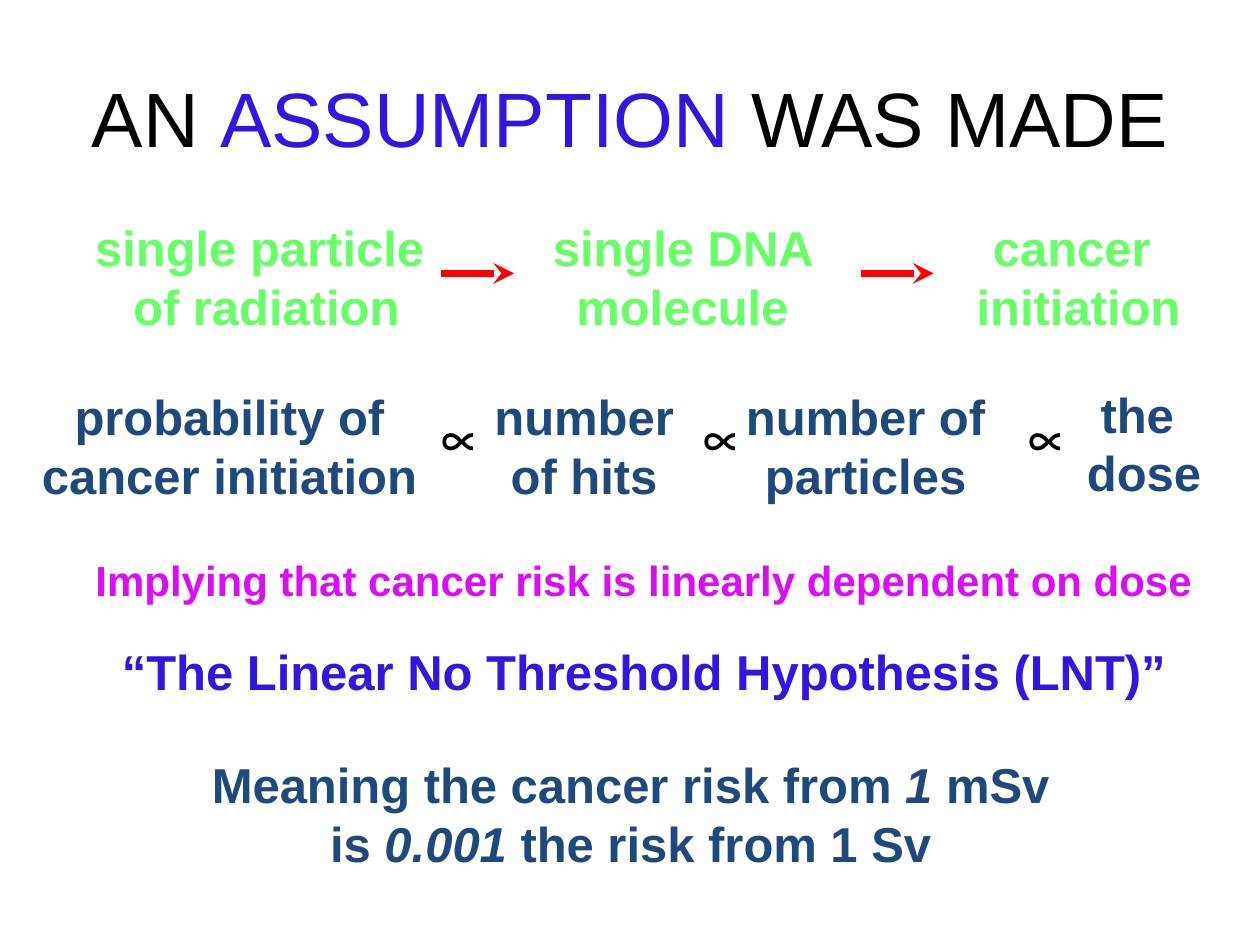
from lxml import etree
from pptx import Presentation
from pptx import util as u
from pptx.dml.color import RGBColor
from pptx.enum import shapes, text
from pptx.oxml.ns import qn

COLOURS = {
    "black": "000000", "blue": "3215E1", "green": "66FF66",
    "navy": "1F497D", "magenta": "DB0DF4", "red": "FF0000",
}


def colour(name):
    return RGBColor.from_string(COLOURS[name])


def add_span(para, words, tint, **formats):
    span = para.add_run()
    span.text = words
    span.font.color.rgb = colour(tint)
    for key, value in {"name": "Arial", **formats}.items():
        setattr(span.font, key, value)


def add_text(page, box, lines, tint, size=28, wrap=False):
    """Add centred bold lines; each line is a list of (words, formats) spans."""
    frame = page.shapes.add_textbox(*map(u.Inches, box)).text_frame
    frame.word_wrap = wrap
    frame.auto_size = text.MSO_AUTO_SIZE.SHAPE_TO_FIT_TEXT
    for index, spans in enumerate(lines):
        para = frame.paragraphs[0] if index == 0 else frame.add_paragraph()
        para.alignment = text.PP_ALIGN.CENTER
        for words, formats in spans:
            add_span(para, words, tint, **{"size": u.Pt(size), "bold": True, **formats})
    return frame


def plain(*lines):
    return [[(line, {})] for line in lines]


def add_arrow(page, left, top, width):
    arrow = page.shapes.add_connector(
        shapes.MSO_CONNECTOR.STRAIGHT,
        *map(u.Inches, (left, top, left + width, top)))
    arrow.line.color.rgb = colour("red")
    arrow.line.width = u.Pt(4)
    etree.SubElement(arrow.line._get_or_add_ln(), qn("a:tailEnd"), type="stealth")
    etree.SubElement(arrow._element.spPr, qn("a:effectLst"))


def add_title(page, box):
    title = page.shapes.title
    for key, value in zip(("left", "top", "width", "height"), box):
        setattr(title, key, u.Inches(value))
    title.text_frame.vertical_anchor = text.MSO_ANCHOR.MIDDLE
    para = title.text_frame.paragraphs[0]
    para.alignment = text.PP_ALIGN.CENTER
    for words, tint in (("AN ", "black"), ("ASSUMPTION ", "blue"), ("WAS MADE", "black")):
        add_span(para, words, tint, size=u.Pt(44))


def add_causal_chain(page, left, top):
    steps = (
        (0, 2.93, ("single particle ", "of radiation")),
        (3.63, 2.38, ("single DNA ", "molecule ")),
        (7, 1.82, ("cancer ", "initiation")),
    )
    for offset, width, lines in steps:
        add_text(page, (left + offset, top, width, 1.03), plain(*lines), "green")
    for offset in (2.85, 6.18):
        add_arrow(page, left + offset, top + 0.49, 0.58)


def add_proportions(page, left, top):
    terms = (
        (0, 0.02, 3.29, ("probability of ", "cancer initiation ")),
        (3.59, 0.02, 1.74, ("number ", "of hits ")),
        (5.59, 0.02, 2.1, ("number of", "particles")),
        (8.18, 0, 1.34, ("the ", "dose")),
    )
    for offset, drop, width, lines in terms:
        add_text(page, (left + offset, top + drop, width, 1.03), plain(*lines), "navy")
    for offset in (3.09, 5.17, 7.75):
        add_text(page, (left + offset, top + 0.08, 0.56, 0.7), plain("∝"), "black", 36)


def add_hypothesis(page, box):
    frame = add_text(page, box, plain(
        "Implying that cancer risk is linearly dependent on dose"),
        "magenta", 24, wrap=True)
    para = frame.add_paragraph()
    para.alignment = text.PP_ALIGN.CENTER
    para.space_before = u.Pt(21)
    add_span(para, "“The Linear No Threshold Hypothesis (LNT)”", "blue",
             size=u.Pt(28), bold=True)


def add_meaning(page, box):
    italic = {"italic": True}
    add_text(page, box, [
        [("Meaning the cancer risk from ", {}), ("1 ", italic), ("mSv ", {})],
        [("is ", {}), ("0.001 ", italic), ("the risk from 1 Sv", {})],
    ], "navy", wrap=True)


def main():
    deck = Presentation()
    deck.slide_width, deck.slide_height = u.Inches(10), u.Inches(7.5)
    page = deck.slides.add_slide(deck.slide_layouts.get_by_name("Title Only"))
    add_title(page, (0.5, 0.3, 9, 1.25))
    add_causal_chain(page, 0.65, 1.68)
    add_proportions(page, 0.23, 3)
    add_hypothesis(page, (0.62, 4.35, 8.98, 1.28))
    add_meaning(page, (1.57, 5.94, 6.87, 1.04))
    deck.save("out.pptx")


if __name__ == "__main__":
    main()
